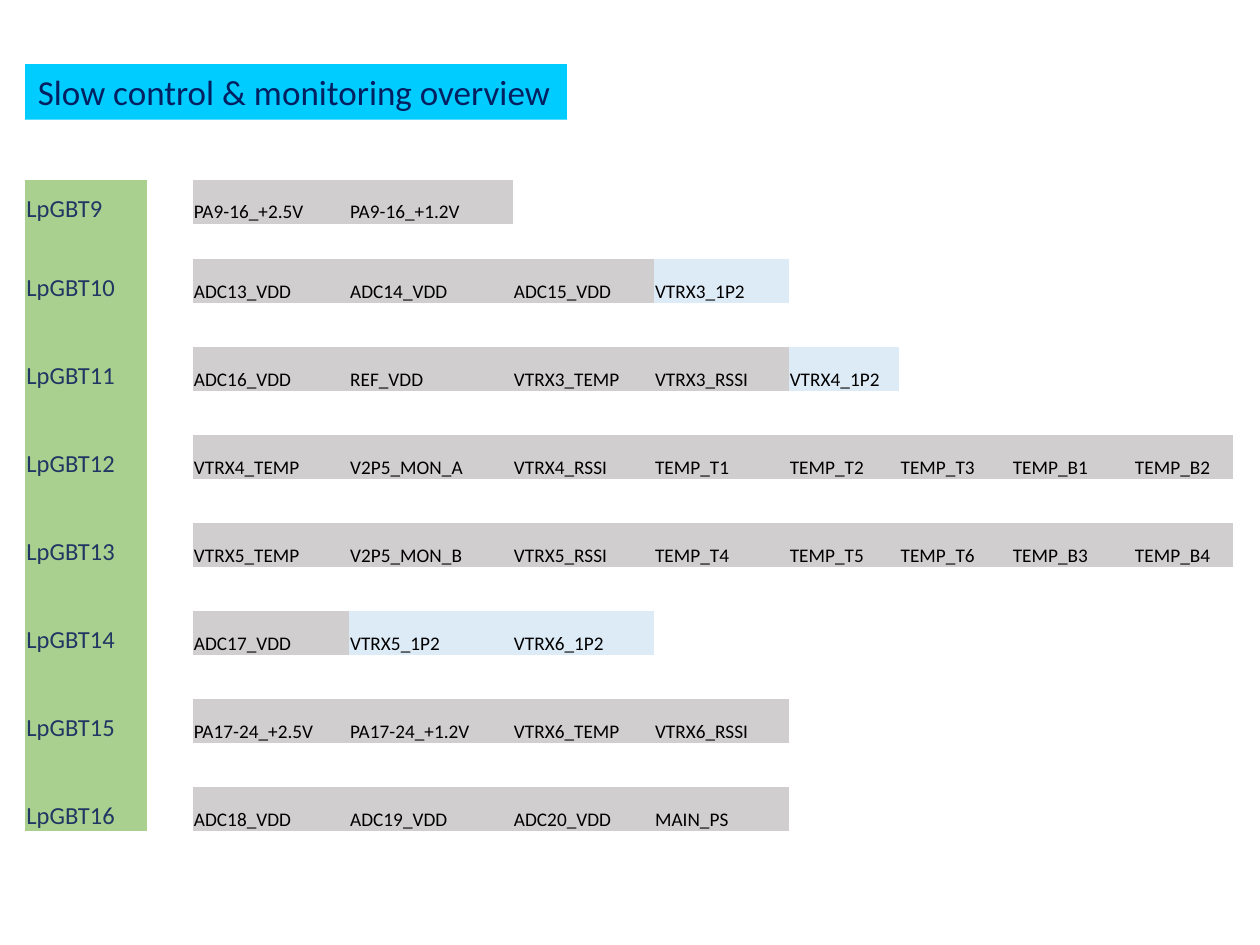
from dataclasses import dataclass

from pptx import Presentation
from pptx.dml.color import RGBColor
from pptx.enum.text import MSO_ANCHOR, MSO_AUTO_SIZE, PP_ALIGN
from pptx.oxml.ns import qn
from pptx.util import Inches, Pt

FONT = "Calibri"
CYAN, NAVY = "00CCFF", "002060"
GREEN, LABEL_BLUE = "A9D08E", "203764"
GREY, PALE_BLUE, BLACK = "D0CECE", "DDEBF7", "000000"
NO_GRID_STYLE = "{2D5ABB26-0587-4C30-8999-92F81FD0307C}"

LEFT_EDGE = 0.2
COLUMN_WIDTHS = [0.97, 0.36, 1.24, 1.3, 1.12, 1.07, 0.88, 0.89, 0.97, 0.79]
FIRST_SIGNAL_COLUMN = 2
TABLE_HEIGHT = 5.17
FIRST_GAP_HEIGHT = 0.28


@dataclass
class Chip:
    name: str
    signals: str

    def signal_fills(self) -> list[tuple[str, str]]:
        """Pair each signal with its fill; the 1P2 supplies stand out."""
        return [(signal, PALE_BLUE if signal.endswith("_1P2") else GREY)
                for signal in self.signals.split()]


CHIPS = [
    Chip("LpGBT9", "PA9-16_+2.5V PA9-16_+1.2V"),
    Chip("LpGBT10", "ADC13_VDD ADC14_VDD ADC15_VDD VTRX3_1P2"),
    Chip("LpGBT11", "ADC16_VDD REF_VDD VTRX3_TEMP VTRX3_RSSI VTRX4_1P2"),
    Chip("LpGBT12", "VTRX4_TEMP V2P5_MON_A VTRX4_RSSI TEMP_T1 TEMP_T2 TEMP_T3 TEMP_B1 TEMP_B2"),
    Chip("LpGBT13", "VTRX5_TEMP V2P5_MON_B VTRX5_RSSI TEMP_T4 TEMP_T5 TEMP_T6 TEMP_B3 TEMP_B4"),
    Chip("LpGBT14", "ADC17_VDD VTRX5_1P2 VTRX6_1P2"),
    Chip("LpGBT15", "PA17-24_+2.5V PA17-24_+1.2V VTRX6_TEMP VTRX6_RSSI"),
    Chip("LpGBT16", "ADC18_VDD ADC19_VDD ADC20_VDD MAIN_PS"),
]


def color(value: str) -> RGBColor:
    return RGBColor.from_string(value)


def paint(target, value: str) -> None:
    target.fill.solid()
    target.fill.fore_color.rgb = color(value)


def write(paragraph, text: str, size: float, text_color: str) -> None:
    paragraph.text = text
    font = paragraph.runs[0].font
    font.name, font.size = FONT, Pt(size)
    font.color.rgb = color(text_color)


def add_heading(slide, text: str) -> None:
    heading = slide.shapes.title
    heading.left, heading.top = Inches(LEFT_EDGE), Inches(0.51)
    heading.width, heading.height = Inches(4.3), Inches(0.44)
    paint(heading, CYAN)
    frame = heading.text_frame
    frame.word_wrap = False
    # A fixed size: a fitted title would keep the layout's taller box
    frame.auto_size = MSO_AUTO_SIZE.NONE
    frame.vertical_anchor = MSO_ANCHOR.TOP
    write(frame.paragraphs[0], text, 20, NAVY)
    frame.paragraphs[0].alignment = PP_ALIGN.LEFT


def clear_cell(cell) -> None:
    cell.fill.background()
    cell.vertical_anchor = MSO_ANCHOR.BOTTOM
    cell.margin_left = cell.margin_right = cell.margin_top = Inches(0.01)
    cell.margin_bottom = 0
    # A small size in empty cells keeps the gap rows low
    cell.text_frame.paragraphs[0]._p.get_or_add_endParaRPr().set("sz", "1100")


def add_signal_table(slide, chips: list[Chip]) -> None:
    row_count = 2 * len(chips) - 1
    table = slide.shapes.add_table(
        row_count, len(COLUMN_WIDTHS), Inches(LEFT_EDGE), Inches(1.43),
        Inches(sum(COLUMN_WIDTHS)), Inches(TABLE_HEIGHT)).table
    table.first_row = table.horz_banding = False
    table._tbl.tblPr.find(qn("a:tableStyleId")).text = NO_GRID_STYLE

    # Column and row sizes
    for column, width in zip(table.columns, COLUMN_WIDTHS):
        column.width = Inches(width)
    row_height = (TABLE_HEIGHT - FIRST_GAP_HEIGHT) / (row_count - 1)
    for index, row in enumerate(table.rows):
        row.height = Inches(FIRST_GAP_HEIGHT if index == 1 else row_height)

    # Plain cells with a green chip column
    for cell in table.iter_cells():
        clear_cell(cell)
    for row_index in range(row_count):
        paint(table.cell(row_index, 0), GREEN)

    # One chip on every second row
    for index, chip in enumerate(chips):
        row_index = 2 * index
        chip_cell = table.cell(row_index, 0)
        write(chip_cell.text_frame.paragraphs[0], chip.name, 14, LABEL_BLUE)
        for column_index, (signal, fill) in enumerate(chip.signal_fills(), FIRST_SIGNAL_COLUMN):
            signal_cell = table.cell(row_index, column_index)
            paint(signal_cell, fill)
            write(signal_cell.text_frame.paragraphs[0], signal, 11, BLACK)


def main() -> None:
    presentation = Presentation()
    presentation.slide_width, presentation.slide_height = Inches(10), Inches(7.5)
    title_only = presentation.slide_layouts[5]
    slide = presentation.slides.add_slide(title_only)
    add_heading(slide, "Slow control & monitoring overview")
    add_signal_table(slide, CHIPS)
    presentation.save("out.pptx")


if __name__ == "__main__":
    main()
